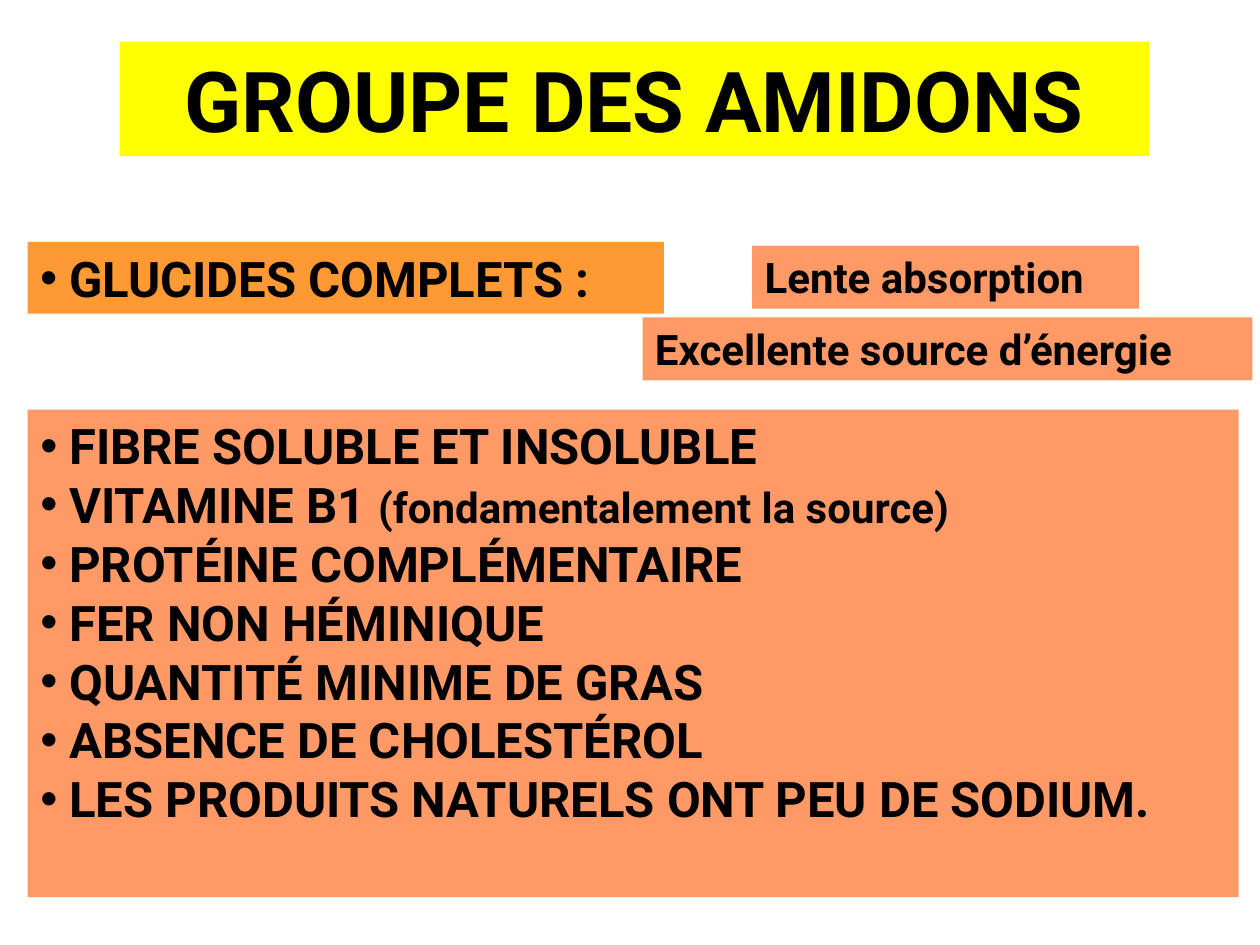
from lxml.etree import SubElement
from pptx import Presentation
from pptx.dml.color import RGBColor
from pptx.enum.text import MSO_ANCHOR, MSO_AUTO_SIZE, PP_ALIGN
from pptx.oxml.ns import qn
from pptx.util import Inches, Pt

BLACK = RGBColor(0, 0, 0)
YELLOW = RGBColor(0xFF, 0xFF, 0x00)
ORANGE = RGBColor(0xFF, 0x99, 0x33)
SALMON = RGBColor(0xFF, 0x99, 0x66)

FONT = "Roboto"
LEFT = 0.22
HANG = Inches(0.23)
BIG, SMALL = 28, 24

NUTRIENTS = [
    [("FIBRE SOLUBLE ET INSOLUBLE", BIG)],
    [("VITAMINE B1 ", BIG), ("(fondamentalement la source)", SMALL)],
    [("PROTÉINE COMPLÉMENTAIRE", BIG)],
    [("FER NON HÉMINIQUE", BIG)],
    [("QUANTITÉ MINIME DE GRAS", BIG)],
    [("ABSENCE DE CHOLESTÉROL", BIG)],
    [("LES PRODUITS NATURELS ONT PEU DE SODIUM.", BIG)],
]


def set_bullet(p, bullet):
    """Give the paragraph a hanging bullet, or none."""
    pPr = p._p.get_or_add_pPr()
    pPr.set("marL", str(HANG if bullet else 0))
    pPr.set("indent", str(-HANG if bullet else 0))
    if bullet:
        SubElement(pPr, qn("a:buFont")).set("typeface", "Arial")
        SubElement(pPr, qn("a:buChar")).set("char", "•")
    else:
        SubElement(pPr, qn("a:buNone"))


def write(sp, paragraphs, align=PP_ALIGN.LEFT, anchor=MSO_ANCHOR.TOP, bullet=False):
    """Write paragraphs, each a list of (text, size) runs."""
    tf = sp.text_frame
    tf.word_wrap = True
    tf.auto_size = MSO_AUTO_SIZE.NONE
    tf.vertical_anchor = anchor
    for i, runs in enumerate(paragraphs):
        p = tf.add_paragraph() if i else tf.paragraphs[0]
        p.alignment = align
        p.space_before = Pt(0)
        set_bullet(p, bullet)
        for text, size in runs:
            r = p.add_run()
            r.text = text
            r.font.name = FONT
            r.font.size = Pt(size)
            r.font.bold = True
            r.font.color.rgb = BLACK


def place(sp, left, top, width, height, fill):
    """Move a placeholder or box and colour it."""
    sp.left, sp.top, sp.width, sp.height = map(Inches, (left, top, width, height))
    sp.fill.solid()
    sp.fill.fore_color.rgb = fill
    return sp


def add_box(s, left, top, width, height, fill):
    return place(s.shapes.add_textbox(0, 0, 0, 0), left, top, width, height, fill)


def main():
    prs = Presentation()
    prs.slide_width, prs.slide_height = Inches(10), Inches(7.5)
    s = prs.slides.add_slide(prs.slide_layouts[1])

    # Title
    title = place(s.shapes.title, 0.95, 0.33, 8.17, 0.91, YELLOW)
    write(title, [[("GROUPE DES AMIDONS", 48)]],
          align=PP_ALIGN.CENTER, anchor=MSO_ANCHOR.MIDDLE)

    # Carbohydrates and their two qualities
    carbs = add_box(s, LEFT, 1.92, 5.05, 0.57, ORANGE)
    write(carbs, [[("GLUCIDES COMPLETS :", BIG)]], bullet=True)
    energy = add_box(s, 5.1, 2.52, 4.84, 0.5, SALMON)
    write(energy, [[("Excellente source d’énergie", SMALL)]])
    absorption = add_box(s, 5.97, 1.95, 3.07, 0.5, SALMON)
    write(absorption, [[("Lente absorption", SMALL)]])

    # Other nutrients
    body = place(s.placeholders[1], LEFT, 3.25, 9.61, 3.87, SALMON)
    write(body, NUTRIENTS, bullet=True)

    prs.save("out.pptx")


if __name__ == "__main__":
    main()
